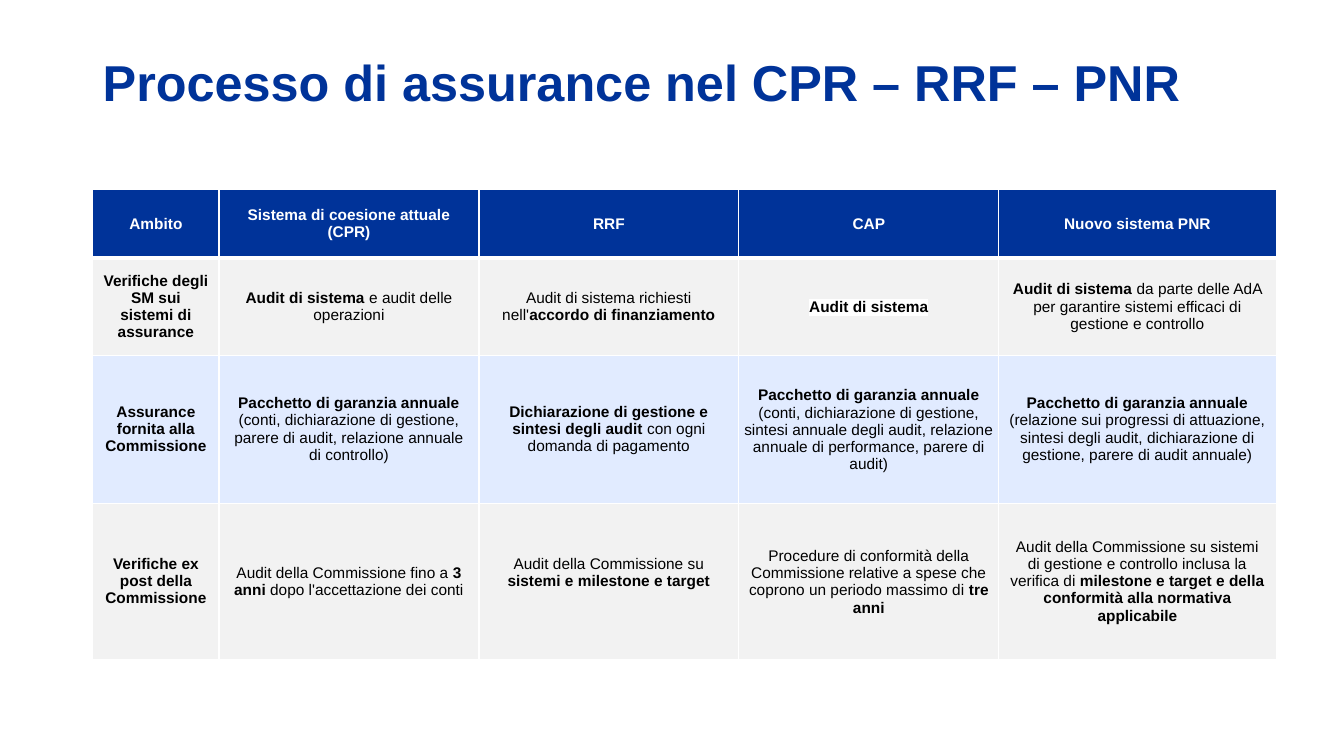
from lxml import etree
from pptx import Presentation
from pptx import util as u
from pptx.dml.color import RGBColor
from pptx.enum import text
from pptx.oxml.ns import qn

# Content: ** switches bold on and off
TITLE = "Processo di assurance nel CPR – RRF – PNR"
ROWS = [
    ["**Ambito**", "**Sistema di coesione attuale (CPR)**", "**RRF**", "**CAP**",
     "**Nuovo sistema PNR**"],
    ["**Verifiche degli SM sui sistemi di assurance**",
     "**Audit di sistema** e audit delle operazioni",
     "Audit di sistema richiesti nell'**accordo di finanziamento**",
     "**Audit di sistema**",
     "**Audit di sistema **da parte delle AdA per garantire sistemi efficaci di "
     "gestione e controllo"],
    ["**Assurance fornita alla Commissione**",
     "**Pacchetto di garanzia annuale** (conti, dichiarazione di gestione, parere "
     "di audit, relazione annuale di controllo)",
     "**Dichiarazione di gestione e sintesi degli audit** con ogni domanda di pagamento",
     "**Pacchetto di garanzia annuale **(conti, dichiarazione di gestione, sintesi "
     "annuale degli audit, relazione annuale di performance, parere di audit)",
     "**Pacchetto di garanzia annuale** (relazione sui progressi di attuazione, "
     "sintesi degli audit, dichiarazione di gestione, parere di audit annuale)"],
    ["**Verifiche ex post della Commissione**",
     "Audit della Commissione fino a **3 anni** dopo l'accettazione dei conti",
     "Audit della Commissione su **sistemi e milestone e target**",
     "Procedure di conformità della Commissione relative a spese che coprono un "
     "periodo massimo di **tre anni**",
     "Audit della Commissione su sistemi di gestione e controllo inclusa la verifica "
     "di **milestone e target e della conformità alla normativa applicabile**"],
]
COLORS = {"blue": "003399", "white": "FFFFFF", "black": "000000",
          "grey": "F2F2F2", "pale": "E1EBFF"}
ROW_FILLS = ["blue", "grey", "pale", "grey"]
COL_WIDTHS = [3.18, 6.55, 6.55, 6.55, 6.99]
ROW_HEIGHTS = [1.73, 2.44, 3.73, 3.94]
LEFT, TABLE_TOP = 2.34, 4.78
CAP_COL = 3
HIGHLIGHTED = (1, CAP_COL)
RAISED = (3, 2)


def add_run(p, words, size, color, bold):
    r = p.add_run()
    r.text = words
    r.font.name = "Arial"
    r.font.size = u.Pt(size)
    r.font.bold = bold
    r.font.color.rgb = RGBColor.from_string(COLORS[color])
    return r


def highlight(r, color):
    mark = etree.Element(qn("a:highlight"))
    etree.SubElement(mark, qn("a:srgbClr")).set("val", COLORS[color])
    r.font._element.find(qn("a:solidFill")).addnext(mark)


def set_borders(cell, widths):
    tcPr = cell._tc.get_or_add_tcPr()
    for i, (side, width) in enumerate(widths.items()):
        ln = etree.Element(qn("a:ln" + side), w=str(u.Pt(width)))
        fill = etree.SubElement(ln, qn("a:solidFill"))
        etree.SubElement(fill, qn("a:srgbClr")).set("val", COLORS["white"])
        tcPr.insert(i, ln)


prs = Presentation()
prs.slide_width, prs.slide_height = u.Cm(33.87), u.Cm(19.05)
s = prs.slides.add_slide(prs.slide_layouts[6])

# Title
tf = s.shapes.add_textbox(u.Cm(LEFT), u.Cm(1.02), u.Cm(29.21), u.Cm(2.26)).text_frame
tf.word_wrap = True
tf.vertical_anchor = text.MSO_ANCHOR.MIDDLE
p = tf.paragraphs[0]
p.line_spacing = 0.9
add_run(p, TITLE, 36, "blue", True)

# Table grid
table = s.shapes.add_table(len(ROWS), len(COL_WIDTHS), u.Cm(LEFT), u.Cm(TABLE_TOP),
                           u.Cm(sum(COL_WIDTHS)), u.Cm(sum(ROW_HEIGHTS))).table
for col, width in zip(table.columns, COL_WIDTHS):
    col.width = u.Cm(width)
for row, height in zip(table.rows, ROW_HEIGHTS):
    row.height = u.Cm(height)

# Table cells
for i, row in enumerate(ROWS):
    for j, words in enumerate(row):
        cell = table.cell(i, j)
        cell.fill.solid()
        cell.fill.fore_color.rgb = RGBColor.from_string(COLORS[ROW_FILLS[i]])
        cell.vertical_anchor = text.MSO_ANCHOR.MIDDLE
        if j == CAP_COL and i > 0:
            cell.margin_left = cell.margin_right = cell.margin_top = u.Cm(0.03)
            cell.margin_bottom = 0
        if (i, j) == RAISED:
            cell.margin_bottom = u.Cm(0.58)
        set_borders(cell, {"L": 1, "R": 1, "T": 3 if i == 1 else 1,
                           "B": 3 if i == 0 else 1})
        p = cell.text_frame.paragraphs[0]
        p.alignment = text.PP_ALIGN.CENTER
        for k, part in enumerate(words.split("**")):
            if part:
                r = add_run(p, part, 11, "black" if i else "white", k % 2 == 1)
                if (i, j) == HIGHLIGHTED:
                    highlight(r, "white")

prs.save("out.pptx")
